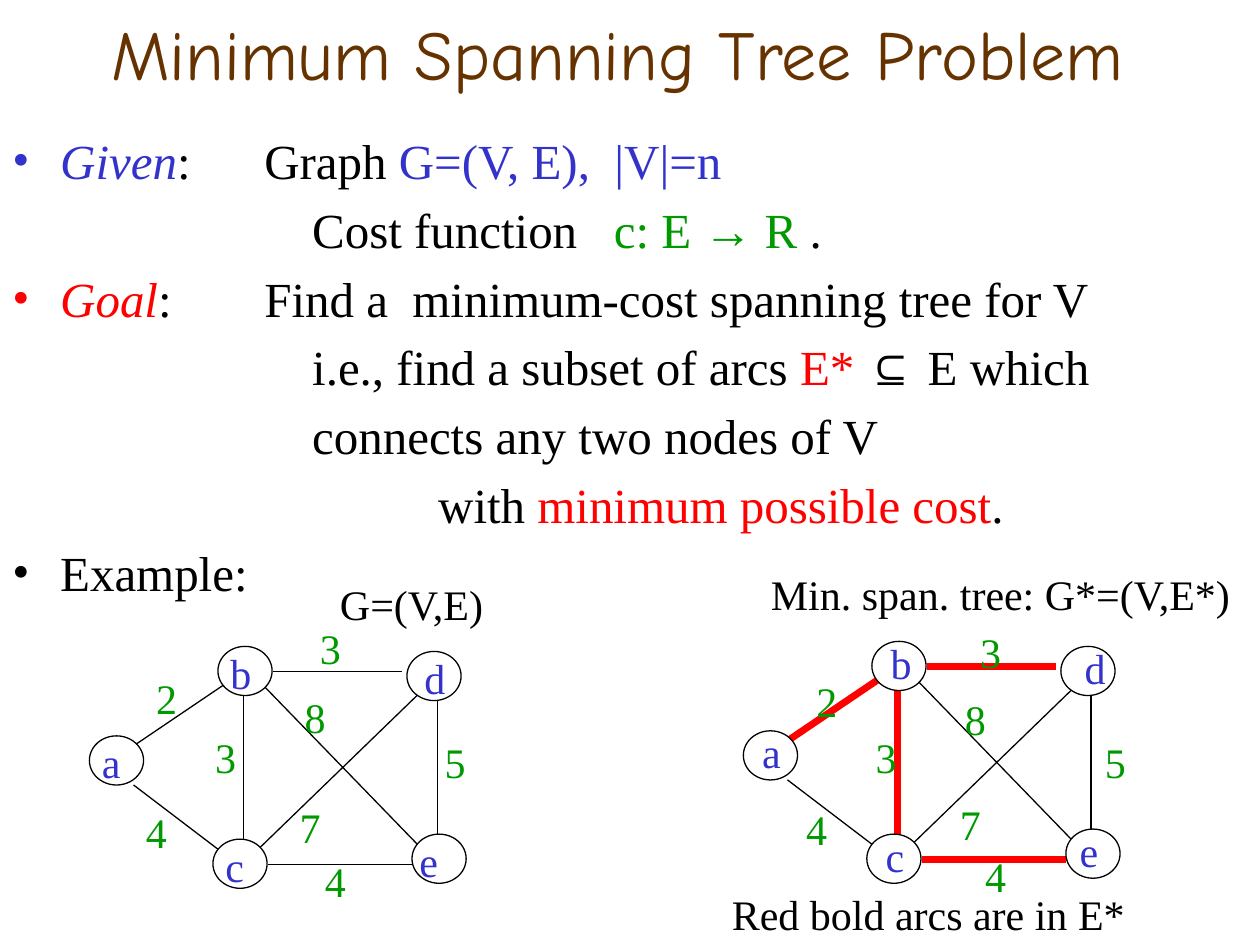
from dataclasses import dataclass

import pptx
import pptx.dml.color
import pptx.enum.shapes
import pptx.enum.text
import pptx.util
from lxml import etree
from pptx.oxml.ns import qn
from pptx.util import Inches

BLACK, WHITE, BLUE = "000000", "FFFFFF", "3333CC"
RED, GREEN, BROWN = "FF0000", "009900", "663300"
SERIF = "Times New Roman"
NODE_WIDTH, NODE_HEIGHT = 0.43, 0.39
LABEL_WIDTH, LABEL_HEIGHT = 0.39, 0.5
HANGING_INDENT = 0.38
TAB_DISTANCE = 1
COST_MIDDLE = 5.76


@dataclass
class Node:
    name: str
    left: float
    top: float
    label_left: float


@dataclass
class Edge:
    start: tuple[float, float]
    end: tuple[float, float]
    in_tree: bool = False


@dataclass
class Cost:
    value: str
    left: float
    top: float


@dataclass
class Graph:
    """Offsets from the given graph; cost_stretch scales cost heights about COST_MIDDLE."""
    shift: tuple[float, float]
    label_shift: tuple[float, float]
    cost_stretch: float
    show_tree: bool


@dataclass
class Part:
    text: str
    color: str = BLACK
    italic: bool = False


NODES = [
    Node("a", 0.71, 5.84, 0.71),
    Node("b", 1.73, 5.13, 1.73),
    Node("c", 1.69, 6.66, 1.69),
    Node("d", 3.23, 5.17, 3.27),
    Node("e", 3.27, 6.62, 3.23),
]
EDGES = [
    Edge((1.06, 5.92), (1.77, 5.44), True),
    Edge((1.06, 6.23), (1.73, 6.74)),
    Edge((2.17, 5.33), (3.19, 5.33), True),
    Edge((2.13, 6.86), (3.27, 6.86), True),
    Edge((1.93, 5.52), (1.93, 6.66), True),
    Edge((3.47, 5.56), (3.47, 6.62)),
    Edge((2.09, 5.44), (3.35, 6.74)),
    Edge((2.05, 6.74), (3.31, 5.52)),
]
COSTS = [
    Cost("2", 1.14, 5.29), Cost("3", 1.61, 5.76), Cost("3", 2.44, 4.89),
    Cost("4", 1.06, 6.35), Cost("4", 2.48, 6.74), Cost("5", 3.43, 5.8),
    Cost("7", 2.28, 6.31), Cost("8", 2.32, 5.44),
]
GRAPHS = [
    Graph((0, 0), (0, 0), 1, False),
    Graph((5.19, -0.04), (5.24, -0.08), 0.96, True),
]
# Each line: whether it has a bullet, then its parts.
BODY = [
    (True, [Part("Given", BLUE, True), Part(":\tGraph "), Part("G=(V, E),  |V|=n", BLUE)]),
    (False, [Part("\t\t\tCost function   "), Part("c: E → R", GREEN), Part(" .")]),
    (True, [Part("Goal", RED, True),
            Part(":\tFind a  minimum-cost spanning tree for V")]),
    (False, [Part("\t\t\ti.e., find a subset of arcs "), Part("E*", RED),
             Part(" ⊆ E which")]),
    (False, [Part("\t\t\tconnects any two nodes of V")]),
    (False, [Part("\t\t\t\twith "), Part("minimum possible cost", RED), Part(".")]),
    (True, [Part("Example:")]),
]


def rgb(color: str) -> pptx.dml.color.RGBColor:
    return pptx.dml.color.RGBColor.from_string(color)


def format_run(run, size: float, color: str, font: str = SERIF, italic: bool = False) -> None:
    run.font.name = font
    run.font.size = pptx.util.Pt(size)
    run.font.color.rgb = rgb(color)
    run.font.italic = italic


def add_label(slide, text: str, left: float, top: float, color: str = BLACK,
              width: float = LABEL_WIDTH) -> None:
    box = slide.shapes.add_textbox(Inches(left), Inches(top), Inches(width),
                                   Inches(LABEL_HEIGHT))
    box.text_frame.word_wrap = True
    box.text_frame.text = text
    format_run(box.text_frame.paragraphs[0].runs[0], 24, color)


def add_edge(slide, edge: Edge, graph: Graph) -> None:
    dx, dy = graph.shift
    (x1, y1), (x2, y2) = edge.start, edge.end
    connector = slide.shapes.add_connector(
        pptx.enum.shapes.MSO_CONNECTOR.STRAIGHT,
        Inches(x1 + dx), Inches(y1 + dy), Inches(x2 + dx), Inches(y2 + dy))
    highlighted = edge.in_tree and graph.show_tree
    connector.line.color.rgb = rgb(RED if highlighted else BLACK)
    connector.line.width = pptx.util.Pt(4 if highlighted else 0.75)
    etree.SubElement(connector._element.spPr, qn("a:effectLst"))


def add_node(slide, node: Node, graph: Graph) -> None:
    dx, dy = graph.shift
    shape = slide.shapes.add_shape(
        pptx.enum.shapes.MSO_SHAPE.OVAL, Inches(node.left + dx), Inches(node.top + dy),
        Inches(NODE_WIDTH), Inches(NODE_HEIGHT))
    shape.shadow.inherit = False
    shape.fill.solid()
    shape.fill.fore_color.rgb = rgb(WHITE)
    shape.line.color.rgb = rgb(BLACK)
    shape.line.width = pptx.util.Pt(0.75)


def add_graph(slide, graph: Graph) -> None:
    for edge in EDGES:
        add_edge(slide, edge, graph)
    for node in NODES:
        add_node(slide, node, graph)
    dx, dy = graph.label_shift
    for cost in COSTS:
        top = COST_MIDDLE + (cost.top - COST_MIDDLE) * graph.cost_stretch
        add_label(slide, cost.value, cost.left + dx, top, GREEN)
    for node in NODES:
        add_label(slide, node.name, node.label_left + dx, node.top - 0.04 + dy, BLUE)


def add_title(slide, text: str) -> None:
    title = slide.shapes.title
    title.left, title.top = Inches(0.43), Inches(0)
    title.width, title.height = Inches(8.94), Inches(0.84)
    title.text_frame.text = text
    title.text_frame.vertical_anchor = pptx.enum.text.MSO_ANCHOR.MIDDLE
    paragraph = title.text_frame.paragraphs[0]
    paragraph.alignment = pptx.enum.text.PP_ALIGN.CENTER
    format_run(paragraph.runs[0], 40, BROWN, "Comic Neue")


def add_body(slide) -> None:
    box = slide.shapes.add_textbox(Inches(0), Inches(0.99), Inches(10), Inches(6.51))
    text_frame = box.text_frame
    text_frame.word_wrap = True
    for index, (bulleted, parts) in enumerate(BODY):
        paragraph = text_frame.add_paragraph() if index else text_frame.paragraphs[0]
        paragraph.space_before = pptx.util.Pt(5.6)
        properties = paragraph._p.get_or_add_pPr()
        properties.set("marL", str(Inches(HANGING_INDENT)))
        properties.set("indent", str(-Inches(HANGING_INDENT)))
        properties.set("defTabSz", str(Inches(TAB_DISTANCE)))
        if bulleted:
            etree.SubElement(properties, qn("a:buFont"), typeface=SERIF)
            etree.SubElement(properties, qn("a:buChar"), char="•")
        else:
            etree.SubElement(properties, qn("a:buNone"))
        for part in parts:
            run = paragraph.add_run()
            run.text = part.text
            format_run(run, 28, part.color, italic=part.italic)


def main() -> None:
    presentation = pptx.Presentation()
    presentation.slide_width, presentation.slide_height = Inches(10), Inches(7.5)
    slide = presentation.slides.add_slide(presentation.slide_layouts.get_by_name("Title Only"))
    add_title(slide, "Minimum Spanning Tree Problem")
    add_body(slide)
    for graph in GRAPHS:
        add_graph(slide, graph)
    add_label(slide, "G=(V,E)", 2.6, 4.54, width=1.57)
    add_label(slide, "Min. span. tree: G*=(V,E*)", 6.02, 4.46, width=3.98)
    add_label(slide, "Red bold arcs are in E*", 5.71, 7, width=3.9)
    presentation.save("out.pptx")


if __name__ == "__main__":
    main()
